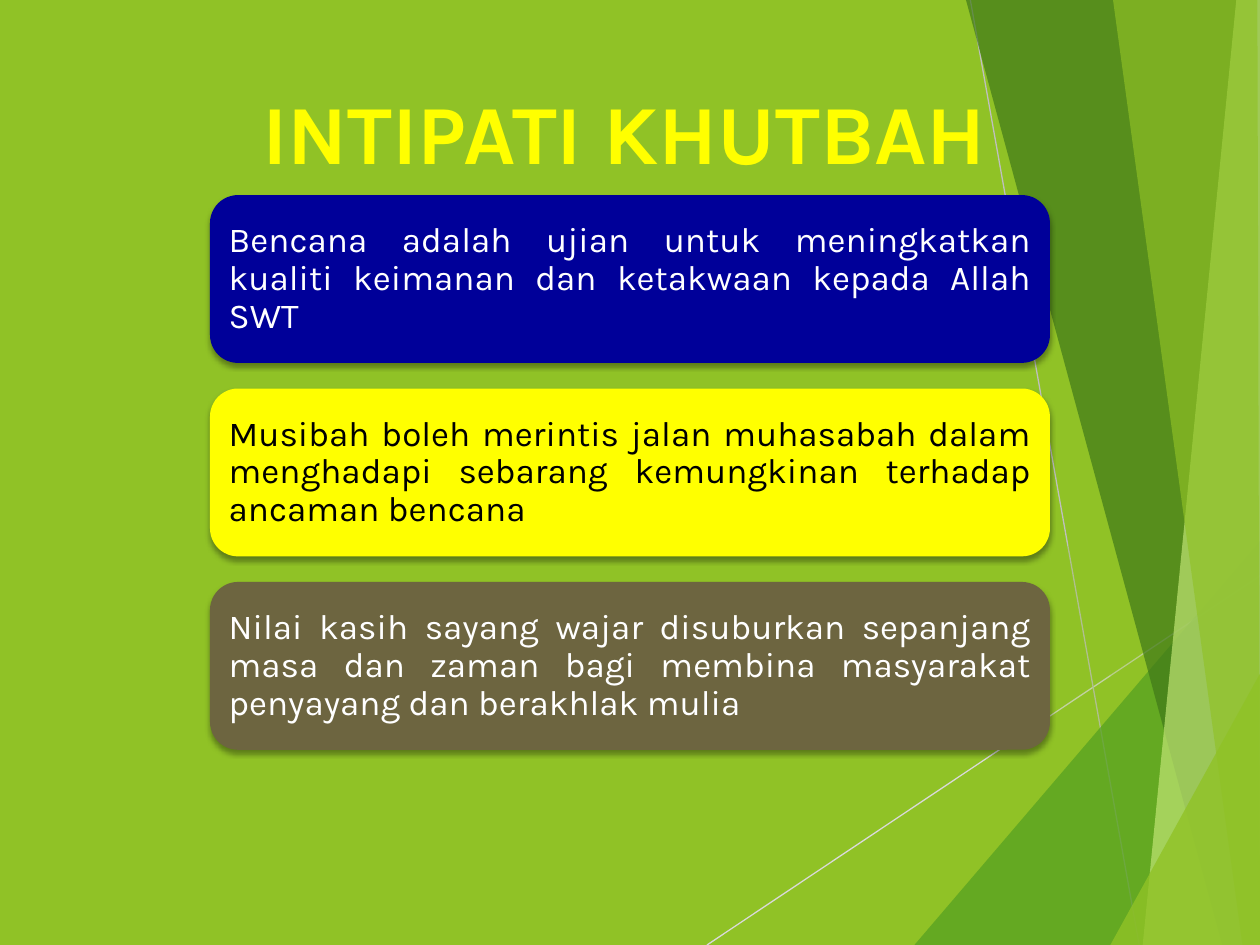
from lxml import etree
from pptx import Presentation
from pptx.dml.color import RGBColor
from pptx.enum.shapes import MSO_CONNECTOR, MSO_SHAPE
from pptx.enum.text import MSO_ANCHOR, PP_ALIGN
from pptx.oxml import parse_xml
from pptx.oxml.ns import qn
from pptx.util import Pt

LINE = MSO_CONNECTOR.STRAIGHT
ROUND = MSO_SHAPE.ROUNDED_RECTANGLE
MIDDLE = MSO_ANCHOR.MIDDLE
CENTER, JUSTIFY = PP_ALIGN.CENTER, PP_ALIGN.JUSTIFY

LIME = RGBColor(0x90, 0xC2, 0x26)
GREEN = RGBColor(0x54, 0xA0, 0x21)
FOREST = RGBColor(0x3F, 0x78, 0x19)
PALE = RGBColor(0xC0, 0xE4, 0x74)
SILVER = RGBColor(0xD9, 0xD9, 0xD9)
GREY = RGBColor(0xBF, 0xBF, 0xBF)
NAVY = RGBColor(0x00, 0x00, 0x99)
YELLOW = RGBColor(0xFF, 0xFF, 0x00)
OLIVE = RGBColor(0x6D, 0x65, 0x40)
WHITE = RGBColor(0xFF, 0xFF, 0xFF)
BLACK = RGBColor(0x00, 0x00, 0x00)

FONT = "Karla"
WIDE, HIGH = 720, 540
SPACE = "http://schemas.openxmlformats.org/drawingml/2006/main"

RAYS = [
    ((404, HIGH), (WIDE, 329), SILVER),
    ((554.5, 0), (651, HIGH), GREY),
]
FACETS = [
    ([(0, 316), (35.5, HIGH), (0, HIGH)], LIME, 85),
    ([(702, 0), (543, HIGH), (WIDE, HIGH), (WIDE, 0)], LIME, 30),
    ([(567.5, 0), (661.5, HIGH), (WIDE, HIGH), (WIDE, 0)], LIME, 20),
    ([(522.5, HIGH), (WIDE, 309), (WIDE, HIGH)], GREEN, 72),
    ([(552, 0), (698.5, HIGH), (WIDE, HIGH), (WIDE, 0)], FOREST, 70),
    ([(706.5, 0), (653, HIGH), (WIDE, HIGH), (WIDE, 0)], PALE, 70),
    ([(636, 0), (710, HIGH), (WIDE, HIGH), (718.5, 0)], LIME, 65),
    ([(634.5, HIGH), (WIDE, 385), (WIDE, HIGH)], LIME, 80),
]
POINTS = [
    ("Bencana adalah ujian untuk meningkatkan kualiti keimanan dan "
     "ketakwaan kepada Allah SWT", NAVY, WHITE),
    ("Musibah boleh merintis jalan muhasabah dalam menghadapi sebarang "
     "kemungkinan terhadap ancaman bencana", YELLOW, BLACK),
    ("Nilai kasih sayang wajar disuburkan sepanjang masa dan zaman bagi "
     "membina masyarakat penyayang dan berakhlak mulia", OLIVE, WHITE),
]


def shade(blur, dist, angle, alpha):
    """Return an effect list with one black outer shadow."""
    return parse_xml(
        f'<a:effectLst xmlns:a="{SPACE}"><a:outerShdw blurRad="{Pt(blur)}" '
        f'dist="{Pt(dist)}" dir="{angle * 60000}" algn="ctr" rotWithShape="0">'
        f'<a:srgbClr val="000000"><a:alpha val="{alpha * 1000}"/></a:srgbClr>'
        '</a:outerShdw></a:effectLst>')


def shade_run(run, *look):
    """Put a shadow behind the letters of a run, after its fill."""
    run.font.fill._xPr.find(qn("a:solidFill")).addnext(shade(*look))


def add_rays(slide):
    """Draw the thin lines that cross the backdrop."""
    for start, end, color in RAYS:
        ray = slide.shapes.add_connector(LINE, *map(Pt, start + end))
        ray.line.color.rgb = color
        ray.line.width = Pt(0.75)
        etree.SubElement(ray._element.spPr, qn("a:effectLst"))


def add_facets(slide):
    """Draw the see-through facets along the slide's edges."""
    for spots, color, alpha in FACETS:
        first, *rest = [(Pt(x), Pt(y)) for x, y in spots]
        pen = slide.shapes.build_freeform(*first)
        pen.add_line_segments(rest, close=True)
        facet = pen.convert_to_shape()
        facet.shadow.inherit = False
        facet.line.fill.background()
        facet.fill.solid()
        facet.fill.fore_color.rgb = color
        tint = facet._element.spPr.find(qn("a:solidFill"))[0]
        etree.SubElement(tint, qn("a:alpha"), val=str(alpha * 1000))


def add_title(slide, left, top, width, height):
    """Place the title in its box, in front of the backdrop."""
    title = slide.shapes.title
    slide.shapes._spTree.append(title._element)
    title.left, title.top = Pt(left), Pt(top)
    title.width, title.height = Pt(width), Pt(height)
    frame = title.text_frame
    frame.text = "INTIPATI KHUTBAH"
    frame.word_wrap = False
    frame.vertical_anchor = MIDDLE
    line = frame.paragraphs[0]
    line.alignment = CENTER
    line.font.name, line.font.size, line.font.bold = FONT, Pt(48), True
    run = line.runs[0]
    run.font.color.rgb = YELLOW
    shade_run(run, 4, 1, 90, 80)


def add_card(slide, text, fill, ink, left, top, width, height):
    """Place one rounded card with its justified text."""
    card = slide.shapes.add_shape(ROUND, Pt(left), Pt(top), Pt(width), Pt(height))
    card.fill.solid()
    card.fill.fore_color.rgb = fill
    card.line.fill.background()
    card._element.spPr.append(shade(3, 2, 90, 35))
    frame = card.text_frame
    frame.text = text
    frame.word_wrap = True
    frame.vertical_anchor = MIDDLE
    frame.margin_left = frame.margin_right = Pt(6)
    frame.margin_top = frame.margin_bottom = Pt(6)
    body = frame.paragraphs[0]
    body.alignment = JUSTIFY
    body.line_spacing = 0.9
    body.space_after = Pt(7)
    body.font.name, body.font.size = FONT, Pt(20)
    run = body.runs[0]
    run.font.color.rgb = ink
    if ink == WHITE:
        shade_run(run, 3, 2, 45, 60)


def add_cards(slide, left, top, width, height):
    """Stack the cards evenly in the given box."""
    gap = 14.6
    tall = (height - gap * (len(POINTS) - 1)) / len(POINTS)
    for row, point in enumerate(POINTS):
        add_card(slide, *point, left, top + row * (tall + gap), width, tall)


def main():
    """Build the slide and save it."""
    deck = Presentation()
    deck.slide_width, deck.slide_height = Pt(WIDE), Pt(HIGH)
    slide = deck.slides.add_slide(deck.slide_layouts[5])
    slide.background.fill.solid()
    slide.background.fill.fore_color.rgb = LIME
    add_rays(slide)
    add_facets(slide)
    add_title(slide, 103, 42, 507.6, 65.5)
    add_cards(slide, 120, 111.5, 480, 317)
    deck.save("out.pptx")


if __name__ == "__main__":
    main()
